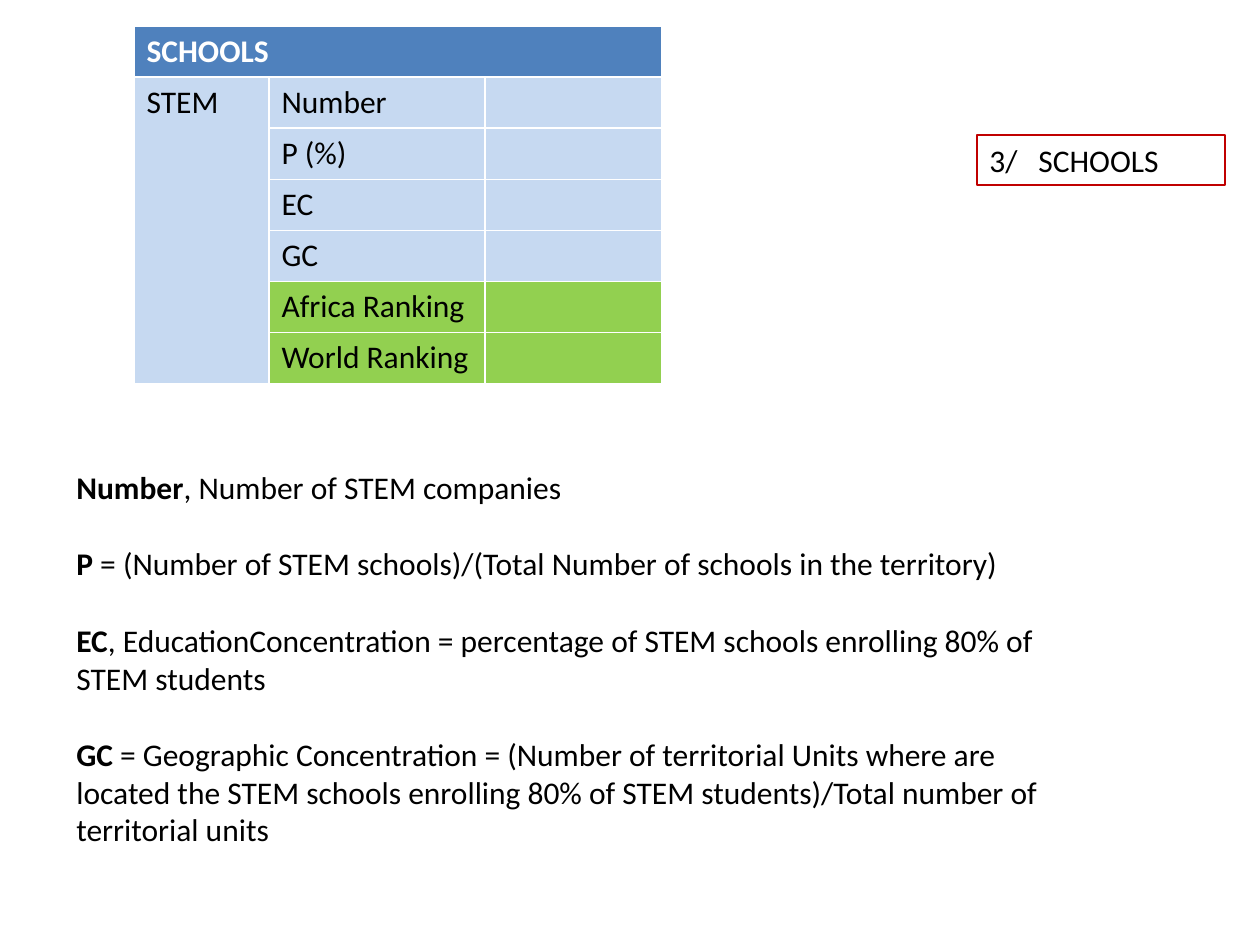
from collections import namedtuple

from pptx import Presentation
from pptx.dml.color import RGBColor
from pptx.enum.shapes import MSO_SHAPE
from pptx.enum.text import MSO_ANCHOR, PP_ALIGN
from pptx.util import Pt

PX = 914400 / 126
WHITE = RGBColor(0xFF, 0xFF, 0xFF)
BLACK = RGBColor(0x00, 0x00, 0x00)
HEADER_BLUE = RGBColor(0x4F, 0x81, 0xBD)
PALE_BLUE = RGBColor(0xC6, 0xD9, 0xF1)
RANKING_GREEN = RGBColor(0x92, 0xD0, 0x50)
LABEL_RED = RGBColor(0xC0, 0x00, 0x00)

Box = namedtuple("Box", "left top width height")

INDICATORS = ["Number", "P (%)", "EC", "GC", "Africa Ranking", "World Ranking"]
DEFINITIONS = [
    ("Number", ", Number of STEM companies"),
    ("P", " = (Number of STEM schools)/(Total Number of schools in the territory)"),
    ("EC", ", EducationConcentration = percentage of STEM schools "
           "enrolling 80% of STEM students"),
    ("GC", " = Geographic Concentration = (Number of territorial Units where are "
           "located the STEM schools enrolling 80% of STEM students)/"
           "Total number of territorial units"),
]


def px(length):
    return round(length * PX)


def emu(box):
    return [px(length) for length in box]


def set_font(para, color=BLACK, bold=None):
    para.font.name = "Calibri"
    para.font.size = Pt(18)
    para.font.color.rgb = color
    para.font.bold = bold


def fill_cell(cell, text, fill, color=BLACK, bold=False):
    cell.text = text
    cell.fill.solid()
    cell.fill.fore_color.rgb = fill
    set_font(cell.text_frame.paragraphs[0], color, bold)


def add_schools_table(page, box):
    row_count = len(INDICATORS) + 1
    table = page.shapes.add_table(row_count, 3, *emu(box)).table
    table.horz_banding = False
    for column, width in zip(table.columns, (135, 216, box.width - 351)):
        column.width = px(width)
    for row in table.rows:
        row.height = px(box.height / row_count)
    for column in range(3):
        fill_cell(table.cell(0, column), "" if column else "SCHOOLS",
                  HEADER_BLUE, WHITE, True)
    for row, indicator in enumerate(INDICATORS, 1):
        fill = RANKING_GREEN if "Ranking" in indicator else PALE_BLUE
        fill_cell(table.cell(row, 0), "STEM" if row == 1 else "", PALE_BLUE)
        fill_cell(table.cell(row, 1), indicator, fill)
        fill_cell(table.cell(row, 2), "", fill)
    table.cell(0, 0).merge(table.cell(0, 2))
    table.cell(1, 0).merge(table.cell(row_count - 1, 0))


def add_definitions(page, box):
    frame = page.shapes.add_textbox(*emu(box)).text_frame
    frame.word_wrap = True
    for index, (term, meaning) in enumerate(DEFINITIONS):
        para = frame.add_paragraph() if index else frame.paragraphs[0]
        para.space_before = Pt(22 if index else 0)
        set_font(para)
        span = para.add_run()
        span.text = term
        span.font.bold = True
        para.add_run().text = meaning


def add_section_label(page, box):
    label = page.shapes.add_shape(MSO_SHAPE.RECTANGLE, *emu(box))
    label.shadow.inherit = False
    label.fill.background()
    label.line.color.rgb = LABEL_RED
    label.line.width = Pt(0.75)
    frame = label.text_frame
    frame.word_wrap = True
    frame.vertical_anchor = MSO_ANCHOR.TOP
    para = frame.paragraphs[0]
    para.text = "3/\tSCHOOLS"
    para.alignment = PP_ALIGN.LEFT
    set_font(para)
    properties = para._p.get_or_add_pPr()
    properties.set("marL", str(px(49)))
    properties.set("indent", str(-px(49)))


def main():
    deck = Presentation()
    deck.slide_width, deck.slide_height = px(1260), px(945)
    page = deck.slides.add_slide(deck.slide_layouts[6])
    add_schools_table(page, Box(134, 26, 528, 353))
    add_definitions(page, Box(64, 462, 1022, 394))
    add_section_label(page, Box(977, 135, 248, 50))
    deck.save("out.pptx")


if __name__ == "__main__":
    main()
